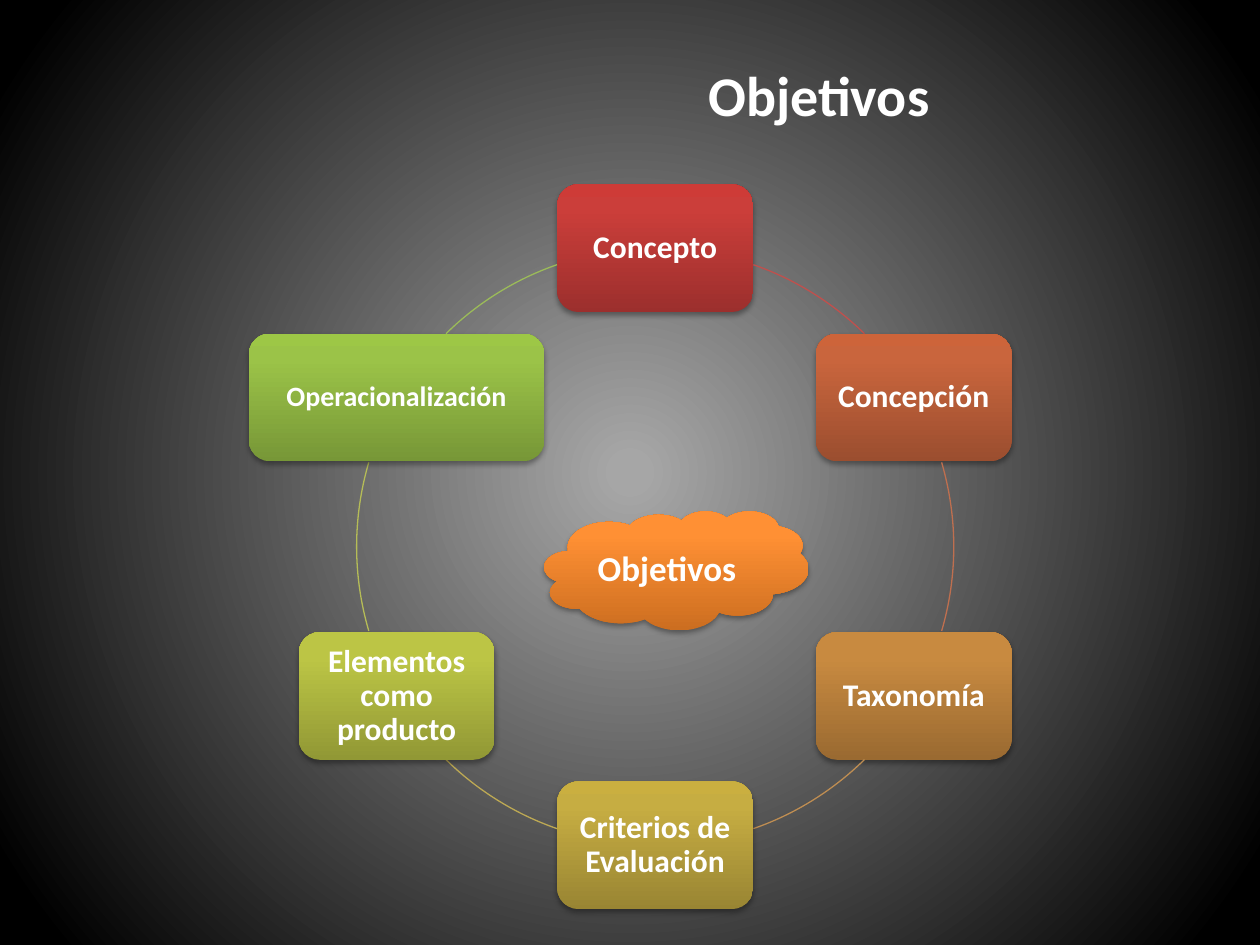
from math import cos, radians, sin

from lxml import etree
from pptx import Presentation
from pptx.dml.color import RGBColor
from pptx.enum.shapes import MSO_SHAPE as Shape
from pptx.enum.text import MSO_ANCHOR as Anchor, PP_ALIGN as Align
from pptx.oxml.ns import qn
from pptx.util import Pt

# Label, text size, box width, gradient (bottom, middle, top), next arc colour
NODES = [
    ("Concepto", 18, 112, ("9C2F2D", "CB3E3A", "CE3B37"), "C0504D"),
    ("Concepción", 18, 112, ("9B4E2F", "C9653D", "CD643A"), "BF6F4F"),
    ("Taxonomía", 18, 112, ("9A6A31", "C88A40", "CB8B3D"), "BE8D52"),
    ("Criterios de Evaluación", 18, 112, ("998533", "C6AD42", "CAAF40"), "BDA954"),
    ("Elementos como producto", 18, 112, ("919835", "BCC545", "BFC843"), "B5BC57"),
    ("Operacionalización", 16, 169, ("779737", "9BC348", "9DC746"), "9BBB59"),
]
# Visible part of the ring after each node, in degrees clockwise from the right
ARCS = [(289.2, 314.5), (343.6, 16.4), (45.5, 70.8),
        (109.2, 134.5), (163.6, 196.4), (225.5, 250.8)]
NODE_H = 73


def color(code):
    return RGBColor.from_string(code)


def add(parent, tag, **attrs):
    return etree.SubElement(parent, qn(tag), {k: str(v) for k, v in attrs.items()})


def shade(fill, root, stops, radial=False):
    """Give a fill gradient stops, from bottom to top or from the centre out."""
    fill.gradient()
    grad = root.find(".//" + qn("a:gradFill"))
    for child in list(grad):
        grad.remove(child)
    items = add(grad, "a:gsLst")
    for pos, code in stops:
        add(add(items, "a:gs", pos=pos * 1000), "a:srgbClr", val=code)
    if radial:
        way = add(grad, "a:path", path="circle")
        add(way, "a:fillToRect", l=50000, t=50000, r=50000, b=50000)
    else:
        add(grad, "a:lin", ang=16200000, scaled=0)


def write(shape, text, size=18, inset=None, spacing=None):
    frame = shape.text_frame
    frame.word_wrap = True
    frame.vertical_anchor = Anchor.MIDDLE
    if inset is not None:
        frame.margin_left = frame.margin_right = Pt(inset)
        frame.margin_top = frame.margin_bottom = Pt(inset)
    para = frame.paragraphs[0]
    para.alignment = Align.CENTER
    if spacing:
        para.line_spacing = spacing
    run = para.add_run()
    run.text = text
    run.font.name = "Calibri"
    run.font.size = Pt(size)
    run.font.bold = True
    run.font.color.rgb = color("FFFFFF")


def block(slide, kind, box, tones):
    """Add a borderless shape with a gradient and a soft shadow."""
    shape = slide.shapes.add_shape(kind, *map(Pt, box))
    props = shape.element.spPr
    shade(shape.fill, props, zip((0, 80, 100), tones))
    shape.line.fill.background()
    shape.shadow.inherit = False
    glow = add(props.find(qn("a:effectLst")), "a:outerShdw", blurRad=Pt(3.1),
               dist=Pt(1.8), dir=5400000, rotWithShape=0)
    add(add(glow, "a:srgbClr", val="000000"), "a:alpha", val=35000)
    return shape


def heading(slide, box):
    title = slide.shapes.title
    title.left, title.top, title.width, title.height = map(Pt, box)
    write(title, "Objetivos", size=32)


def cycle(slide, box):
    left, top, size = box
    radius = size / 2
    for i, (label, points, width, tones, tint) in enumerate(NODES):
        # Node, spaced evenly from the top of the ring
        angle = radians(60 * i - 90)
        x = left + radius + radius * cos(angle)
        y = top + radius + radius * sin(angle)
        node = block(slide, Shape.ROUNDED_RECTANGLE,
                     (x - width / 2, y - NODE_H / 2, width, NODE_H), tones)
        write(node, label, size=points, inset=5, spacing=0.9)

        # Arc to the next node; an adjustment unit is 5/3 of a degree
        arc = slide.shapes.add_shape(Shape.ARC, Pt(left), Pt(top), Pt(size), Pt(size))
        for k, end in enumerate(ARCS[i]):
            arc.adjustments[k] = end * 0.6
        arc.fill.background()
        arc.line.color.rgb = color(tint)
        arc.line.width = Pt(0.75)
        arc.shadow.inherit = False


def cloud(slide, box):
    shape = block(slide, Shape.CLOUD, box, ("CC6E20", "FF9034", "FF9136"))
    write(shape, "Objetivos", size=20)


def main():
    deck = Presentation()
    deck.slide_width, deck.slide_height = Pt(720), Pt(540)
    slide = deck.slides.add_slide(deck.slide_layouts[5])
    shade(slide.background.fill, slide.element,
          [(2, "A6A6A6"), (94, "000000")], radial=True)
    heading(slide, (241, 27, 454, 54))
    cycle(slide, (203.8, 141.8, 341.2))
    cloud(slide, (311, 292, 151, 68))
    deck.save("out.pptx")


if __name__ == "__main__":
    main()
